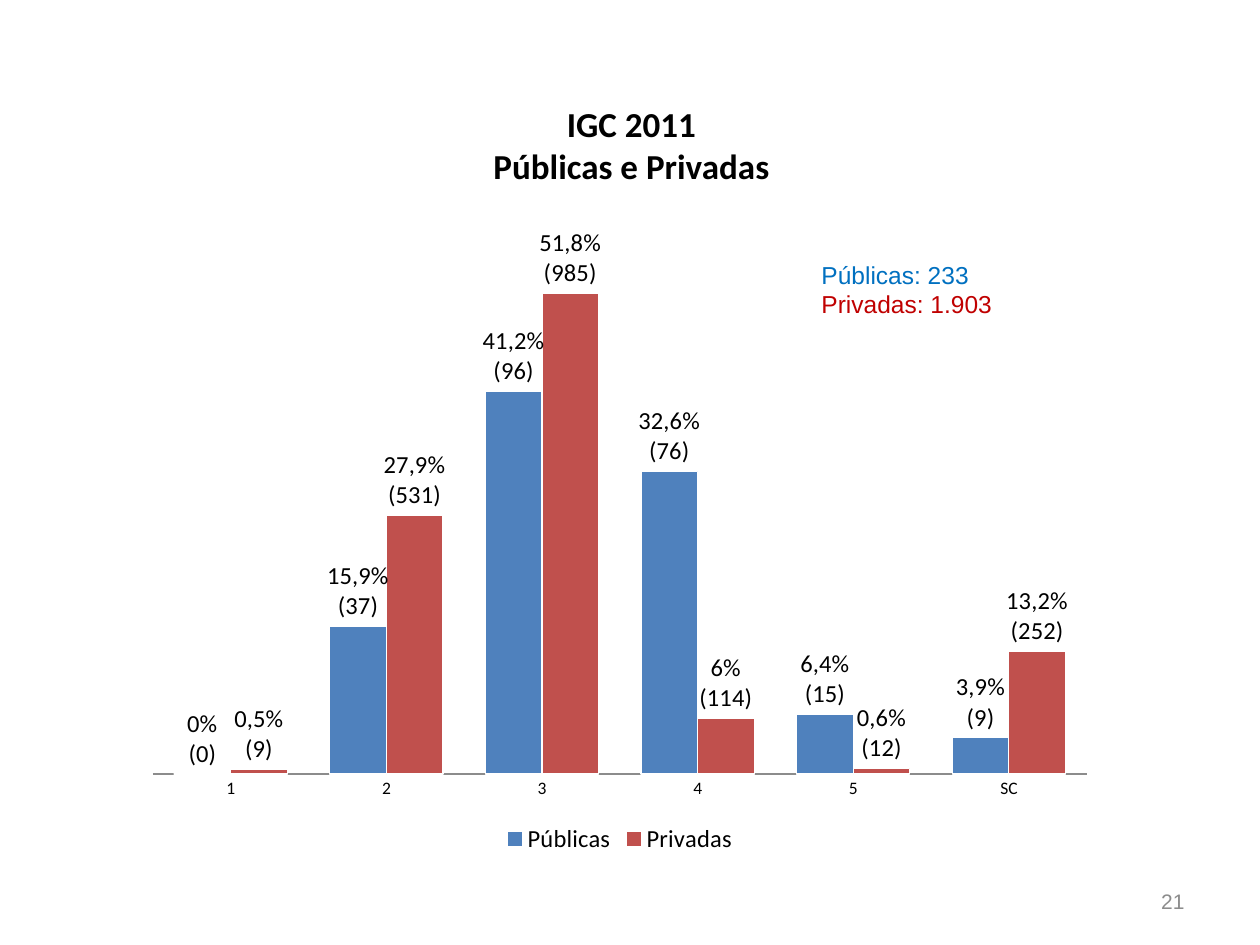
from lxml import etree
from pptx import Presentation
from pptx.chart.data import CategoryChartData
from pptx.dml.color import RGBColor
from pptx.enum.chart import XL_CHART_TYPE, XL_LABEL_POSITION, XL_LEGEND_POSITION, XL_TICK_MARK
from pptx.enum.text import MSO_ANCHOR, PP_ALIGN
from pptx.oxml.ns import qn
from pptx.util import Cm, Pt

COLUMNS = XL_CHART_TYPE.COLUMN_CLUSTERED
OUTSIDE_END = XL_LABEL_POSITION.OUTSIDE_END
LEGEND_BOTTOM = XL_LEGEND_POSITION.BOTTOM
NO_TICK = XL_TICK_MARK.NONE
TOP, MIDDLE = MSO_ANCHOR.TOP, MSO_ANCHOR.MIDDLE
LEFT, CENTER, RIGHT = PP_ALIGN.LEFT, PP_ALIGN.CENTER, PP_ALIGN.RIGHT

BLACK = RGBColor(0x00, 0x00, 0x00)
WHITE = RGBColor(0xFF, 0xFF, 0xFF)
GRAY = RGBColor(0x8C, 0x8C, 0x8C)
PUBLIC_BAR = RGBColor(0x4F, 0x81, 0xBD)
PRIVATE_BAR = RGBColor(0xC0, 0x50, 0x4D)
PUBLIC_TEXT = RGBColor(0x00, 0x70, 0xC0)
PRIVATE_TEXT = RGBColor(0xC0, 0x00, 0x00)

TITLE_FONT = {"name": "Calibri", "size": Pt(20), "bold": True}
AXIS_FONT = {"name": "Calibri", "size": Pt(10)}
LABEL_FONT = {"name": "Calibri", "size": Pt(14)}
TOTALS_FONT = {"name": "Arial", "size": Pt(14)}
NUMBER_FONT = {"name": "Arial", "size": Pt(12)}

GRADES = ["1", "2", "3", "4", "5", "SC"]
SECTORS = [
    ("Públicas", PUBLIC_BAR,
     [0, 0.159, 0.412, 0.326, 0.064, 0.039],
     [0, 37, 96, 76, 15, 9]),
    ("Privadas", PRIVATE_BAR,
     [0.005, 0.279, 0.518, 0.06, 0.006, 0.132],
     [9, 531, 985, 114, 12, 252]),
]
PLOT_AREA = {"x": 0.02, "y": 0.02, "w": 0.96, "h": 0.85}


def apply_format(target, values):
    for name, value in values.items():
        setattr(target, name, value)


def style_font(font, values, color):
    apply_format(font, values)
    font.color.rgb = color


def add_text(slide, box, lines, font_values, align, frame_values):
    frame = slide.shapes.add_textbox(*map(Cm, box)).text_frame
    apply_format(frame, {"word_wrap": True, **frame_values})
    for index, (text, color) in enumerate(lines):
        paragraph = frame.add_paragraph() if index else frame.paragraphs[0]
        paragraph.alignment = align
        run = paragraph.add_run()
        run.text = text
        style_font(run.font, font_values, color)


def place_plot(chart):
    plot_area = chart.plots[0]._element.getparent()
    for old_layout in plot_area.findall(qn("c:layout")):
        plot_area.remove(old_layout)
    layout = etree.Element(qn("c:layout"))
    plot_area.insert(0, layout)
    manual = etree.SubElement(layout, qn("c:manualLayout"))
    settings = {"layoutTarget": "inner", "xMode": "edge", "yMode": "edge", **PLOT_AREA}
    for tag, value in settings.items():
        etree.SubElement(manual, qn(f"c:{tag}")).set("val", str(value))


def label_columns(series, shares, counts):
    for index, (share, count) in enumerate(zip(shares, counts)):
        percent = f"{share * 100:.1f}".removesuffix(".0").replace(".", ",")
        label = series.points[index].data_label
        label.text_frame.text = f"{percent}%\n({count})"
        for paragraph in label.text_frame.paragraphs:
            style_font(paragraph.runs[0].font, LABEL_FONT, BLACK)
        label.position = OUTSIDE_END


def add_grade_chart(slide, box):
    data = CategoryChartData(number_format="0.0%")
    data.categories = GRADES
    for name, _, shares, _ in SECTORS:
        data.add_series(name, shares)
    chart = slide.shapes.add_chart(COLUMNS, *map(Cm, box), data).chart
    apply_format(chart, {"has_title": False, "has_legend": True})
    style_font(chart.font, AXIS_FONT, BLACK)
    apply_format(chart.legend, {"position": LEGEND_BOTTOM, "include_in_layout": False})
    style_font(chart.legend.font, LABEL_FONT, BLACK)
    apply_format(chart.value_axis, {
        "minimum_scale": 0, "maximum_scale": 0.6,
        "has_major_gridlines": False, "visible": False,
    })
    apply_format(chart.category_axis, {"major_tick_mark": NO_TICK, "minor_tick_mark": NO_TICK})
    chart.category_axis.format.line.color.rgb = GRAY
    plot = chart.plots[0]
    apply_format(plot, {"gap_width": 75, "overlap": 0, "vary_by_categories": False})
    for series, (_, color, shares, counts) in zip(plot.series, SECTORS):
        series.format.fill.solid()
        series.format.fill.fore_color.rgb = color
        series.format.line.color.rgb = WHITE
        series.format.line.width = Pt(0.75)
        apply_format(series.data_labels, {
            "show_value": True, "position": OUTSIDE_END,
            "number_format": "0.0%", "number_format_is_linked": False,
        })
        style_font(series.data_labels.font, LABEL_FONT, BLACK)
        label_columns(series, shares, counts)
    place_plot(chart)


def add_title(slide, box):
    lines = [("IGC 2011", BLACK), ("Públicas e Privadas", BLACK)]
    add_text(slide, box, lines, TITLE_FONT, CENTER,
             {"vertical_anchor": MIDDLE, "margin_top": 0, "margin_bottom": Cm(0.87)})


def add_totals(slide, box):
    lines = [("Públicas: 233", PUBLIC_TEXT), ("Privadas: 1.903", PRIVATE_TEXT)]
    add_text(slide, box, lines, TOTALS_FONT, LEFT,
             {"vertical_anchor": TOP, "margin_top": Cm(0.72)})


def add_slide_number(slide, box):
    add_text(slide, box, [("21", GRAY)], NUMBER_FONT, RIGHT, {"vertical_anchor": MIDDLE})


def main():
    presentation = Presentation()
    apply_format(presentation, {"slide_width": Cm(25.4), "slide_height": Cm(19.05)})
    slide = presentation.slides.add_slide(presentation.slide_layouts[6])
    add_title(slide, (1.3, 2.34, 22.86, 2))
    add_slide_number(slide, (18.21, 17.65, 5.92, 1.02))
    add_grade_chart(slide, (2.69, 4.11, 19.61, 13.21))
    add_totals(slide, (16.31, 4.52, 6.81, 2.06))
    presentation.save("out.pptx")


if __name__ == "__main__":
    main()
